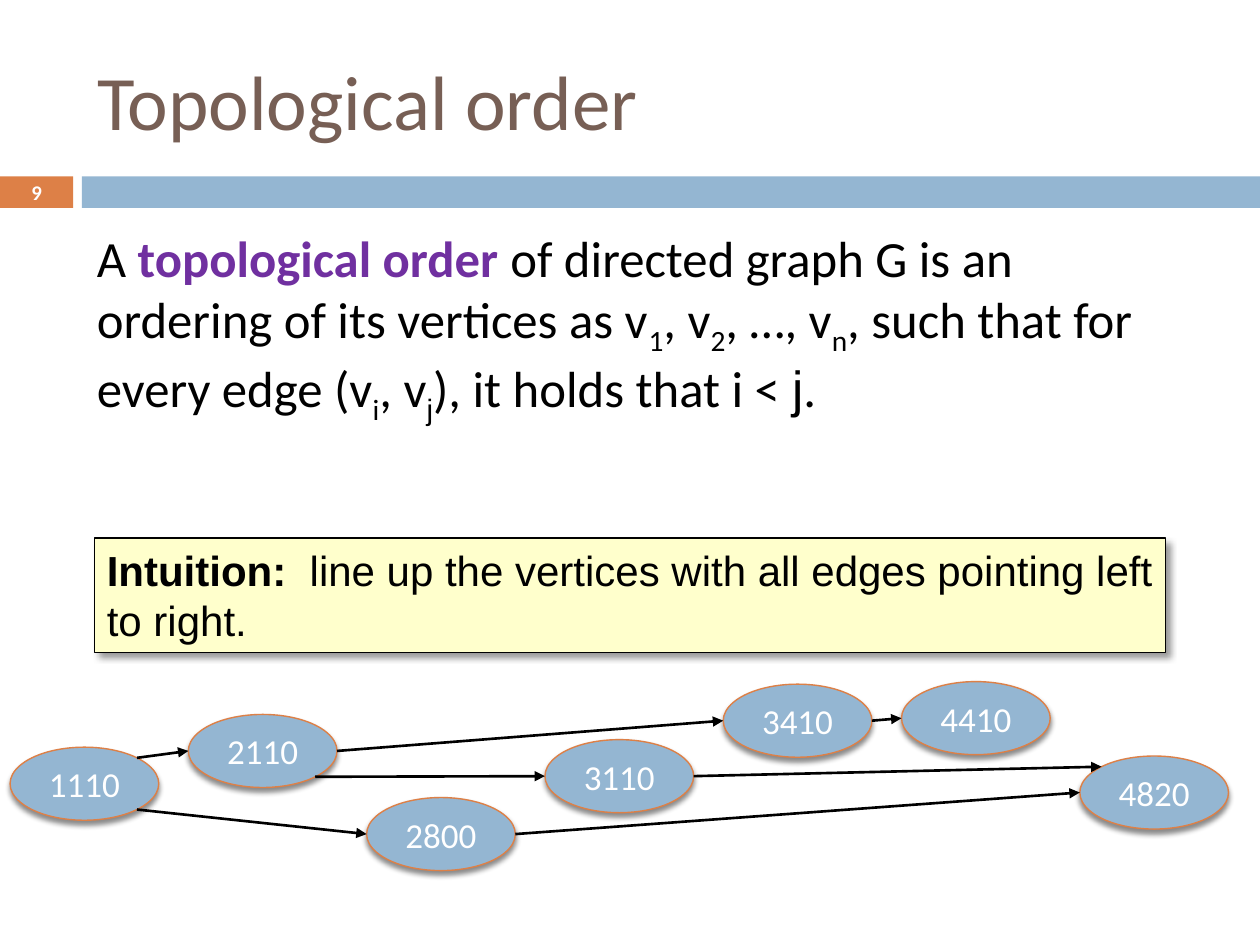
from math import cos, radians, sin
from lxml import etree
from pptx import Presentation
from pptx.dml.color import RGBColor
from pptx.enum.shapes import MSO_CONNECTOR, MSO_SHAPE
from pptx.enum.text import MSO_ANCHOR, MSO_AUTO_SIZE, PP_ALIGN
from pptx.oxml.ns import qn
from pptx.util import Inches, Pt

RECT, OVAL = MSO_SHAPE.RECTANGLE, MSO_SHAPE.OVAL
LINE = MSO_CONNECTOR.STRAIGHT
MID, TOP = MSO_ANCHOR.MIDDLE, MSO_ANCHOR.TOP
LEFT, CENTER = PP_ALIGN.LEFT, PP_ALIGN.CENTER
GROW, FIXED = MSO_AUTO_SIZE.SHAPE_TO_FIT_TEXT, MSO_AUTO_SIZE.NONE

THEME = {
    "blue": "94B6D2", "orange": "DD8047", "brown": "775F55",
    "purple": "7030A0", "cream": "FFFFCC", "black": "000000", "white": "FFFFFF",
    "title": 44, "body": 29, "note": 24, "node": 20, "page": 11.9,
    "font": "Calibri", "alt": "Arial",
}

TITLE = [("Topological order", {})]
PAGE = [("9", {"bold": True})]
SUB = {"sub": True}
ALT = {"name": THEME["alt"]}
BODY = [
    ("A ", {}),
    ("topological order ", {"bold": True, "color": "purple"}),
    ("of directed graph G is an ordering of its vertices as v", {}),
    ("1", SUB), (", v", {}), ("2", SUB), (", …, v", {}), ("n", SUB),
    (", such that for every edge (v", {}), ("i", SUB), (", v", {}),
    ("j", {**SUB, **ALT}), ("), it holds that i < ", {}), ("j", ALT), (".", {}),
]
NOTE = [
    ("Intuition:", {"bold": True, **ALT}),
    ("  line up the vertices with all edges pointing left to right.", ALT),
]
NODES = [("1110", 5.93), ("2110", 5.67), ("2800", 6.33), ("3110", 5.87),
         ("3410", 5.43), ("4410", 5.41), ("4820", 6)]
EDGES = [
    ("1110", "NE", "2110", "W"), ("1110", "SE", "2800", "W"),
    ("2110", "E", "3410", "W"), ("2110", "SE", "3110", "W"),
    ("2800", "E", "4820", "W"), ("3110", "E", "4820", "NW"),
    ("3410", "E", "4410", "W"),
]
PORTS = {"E": 0, "SE": 45, "W": 180, "NW": 225, "NE": 315}

WIDE, HIGH = 10, 7.5
EDGE, SPAN = 0.67, 8.92
BAR, THICK, TAB, GAP = 1.4, 0.25, 0.58, 0.07
START, PITCH, NODE_W, NODE_H = 0.08, 1.415, 1.18, 0.58


def rgb(key):
    return RGBColor.from_string(THEME[key])


def write(shape, runs, size, color, align=LEFT, anchor=TOP, fit=FIXED, before=0):
    frame = shape.text_frame
    for key, val in {"word_wrap": True, "auto_size": fit, "vertical_anchor": anchor}.items():
        setattr(frame, key, val)
    para = frame.paragraphs[0]
    for key, val in {"alignment": align, "space_before": Pt(before)}.items():
        setattr(para, key, val)
    for text, look in runs:
        run = para.add_run()
        run.text = text
        style = {"name": look.get("name", THEME["font"]),
                 "size": Pt(THEME[size]), "bold": look.get("bold", False)}
        for key, val in style.items():
            setattr(run.font, key, val)
        run.font.color.rgb = rgb(look.get("color", color))
        if look.get("sub"):
            run._r.get_or_add_rPr().set("baseline", "-25000")


def draw(slide, kind, box, fill, line=None, width=0, shade=None):
    shape = slide.shapes.add_shape(kind, *map(Inches, box))
    shape.shadow.inherit = False
    shape.fill.solid()
    shape.fill.fore_color.rgb = rgb(fill)
    if line:
        shape.line.color.rgb = rgb(line)
        shape.line.width = Pt(width)
    else:
        shape.line.fill.background()
    if shade:
        alpha, blur, dist, angle = shade
        cast = etree.SubElement(
            shape._element.spPr.find(qn("a:effectLst")), qn("a:outerShdw"),
            blurRad=str(Pt(blur)), dist=str(Pt(dist)), dir=str(angle * 60000),
            algn="ctr", rotWithShape="0")
        tone = etree.SubElement(cast, qn("a:srgbClr"), val=THEME["black"])
        etree.SubElement(tone, qn("a:alpha"), val=str(alpha * 1000))
    return shape


def port(spot, side):
    left, top = spot
    turn = radians(PORTS[side])
    return (Inches(left + NODE_W / 2 * (1 + cos(turn))),
            Inches(top + NODE_H / 2 * (1 + sin(turn))))


def arrow(slide, start, end):
    link = slide.shapes.add_connector(LINE, *start, *end)
    link.line.color.rgb = rgb("black")
    link.line.width = Pt(1.5)
    etree.SubElement(link.line._get_or_add_ln(), qn("a:tailEnd"), type="triangle")
    etree.SubElement(link._element.spPr, qn("a:effectLst"))


def main():
    deck = Presentation()
    deck.slide_width, deck.slide_height = Inches(WIDE), Inches(HIGH)
    slide = deck.slides.add_slide(deck.slide_layouts[5])

    tab = draw(slide, RECT, (0, BAR, TAB, THICK), "orange")
    for side in ("left", "right", "top", "bottom"):
        setattr(tab.text_frame, "margin_" + side, 0)
    write(tab, PAGE, "page", "white", CENTER, MID)
    draw(slide, RECT, (TAB + GAP, BAR, WIDE - TAB - GAP, THICK), "blue")

    title = slide.shapes.title
    place = {"left": EDGE, "top": 0.25, "width": SPAN, "height": 1.08}
    for key, val in place.items():
        setattr(title, key, Inches(val))
    write(title, TITLE, "title", "brown", anchor=MID)

    body = slide.shapes.add_textbox(*map(Inches, (EDGE, 1.75, SPAN, 4.92)))
    write(body, BODY, "body", "black", before=7)

    spots = {}
    for col, (name, top) in enumerate(NODES):
        spots[name] = START + col * PITCH, top
        node = draw(slide, OVAL, (*spots[name], NODE_W, NODE_H),
                    "blue", "orange", 0.79, (45, 3, 2.4, 90))
        write(node, [(name, {})], "node", "white", CENTER, MID)
    for tail, leave, head, enter in EDGES:
        arrow(slide, port(spots[tail], leave), port(spots[head], enter))

    note = draw(slide, RECT, (0.75, 4.27, WIDE - 1.5, 0.91),
                "cream", "black", 0.75, (40, 4, 3, 45))
    write(note, NOTE, "note", "black", fit=GROW)
    deck.save("out.pptx")


if __name__ == "__main__":
    main()
